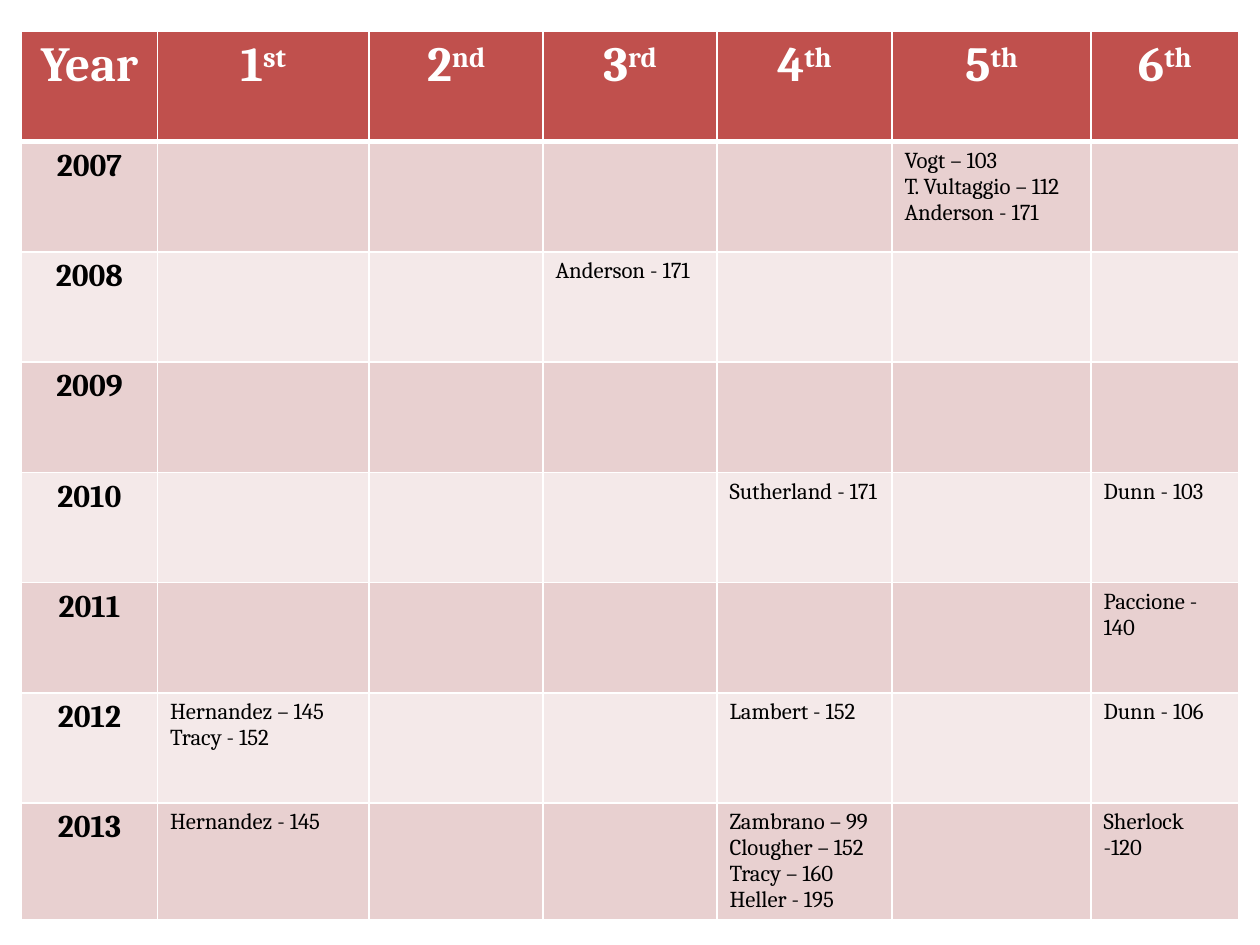
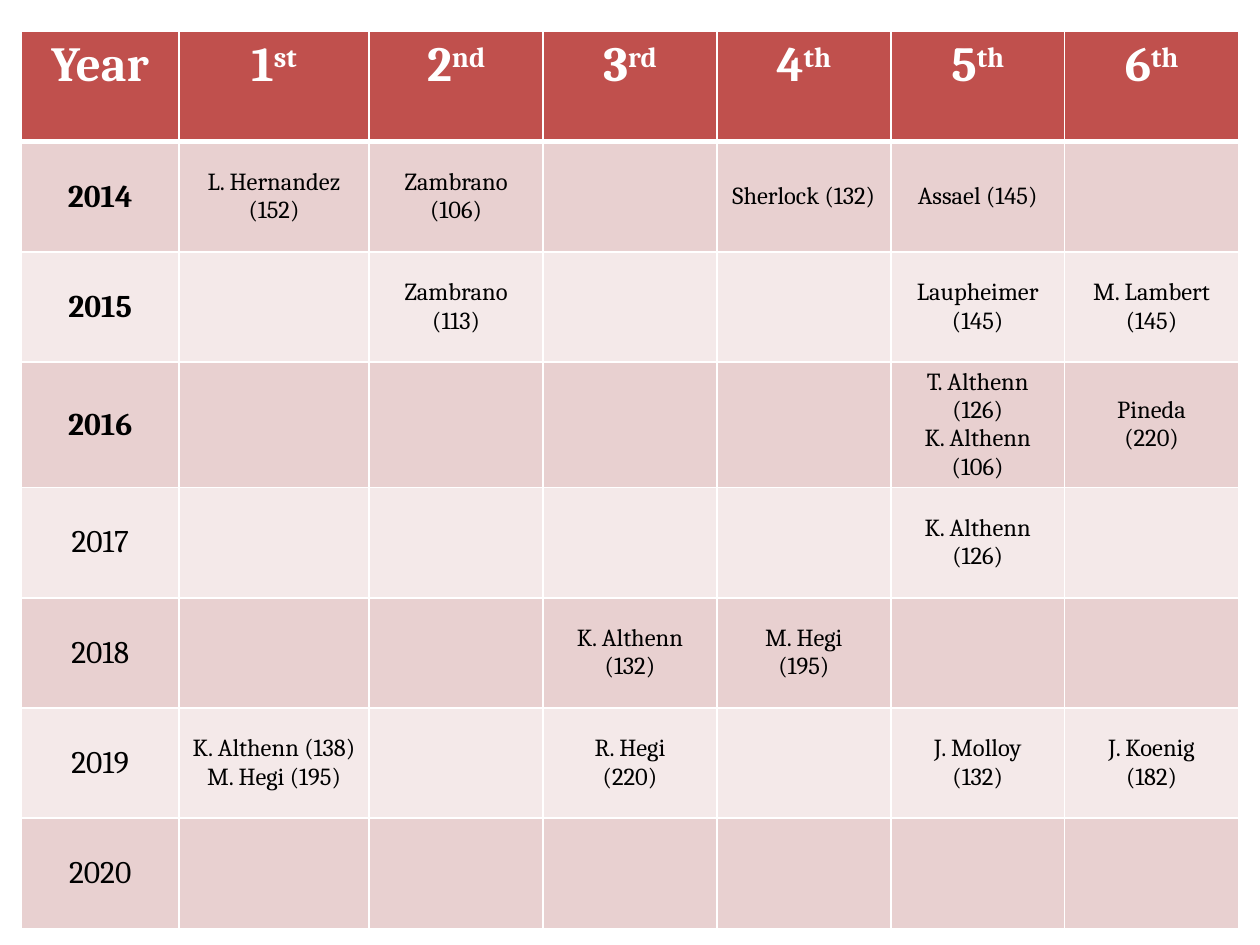
from lxml.etree import SubElement
from pptx import Presentation
from pptx.dml.color import RGBColor
from pptx.enum.text import MSO_ANCHOR as Anchor, PP_ALIGN as Align
from pptx.oxml.ns import qn
from pptx.util import Inches, Pt

HEADINGS = [("Year", ""), ("1", "st"), ("2", "nd"), ("3", "rd"),
            ("4", "th"), ("5", "th"), ("6", "th")]

EARLY_RESULTS = {
    "2007": {5: ["Vogt – 103", "T. Vultaggio – 112", "Anderson - 171"]},
    "2008": {3: ["Anderson - 171"]},
    "2009": {},
    "2010": {4: ["Sutherland - 171"], 6: ["Dunn - 103"]},
    "2011": {6: ["Paccione - 140"]},
    "2012": {1: ["Hernandez – 145", "Tracy - 152"], 4: ["Lambert - 152"], 6: ["Dunn - 106"]},
    "2013": {1: ["Hernandez - 145"],
             4: ["Zambrano – 99", "Clougher – 152", "Tracy – 160", "Heller - 195"],
             6: ["Sherlock -120"]},
}
LATE_RESULTS = {
    "2014": {1: ["L. Hernandez (152)"], 2: ["Zambrano (106)"],
             4: ["Sherlock (132)"], 5: ["Assael (145)"]},
    "2015": {2: ["Zambrano", "(113)"], 5: ["Laupheimer", "(145)"], 6: ["M. Lambert", "(145)"]},
    "2016": {5: ["T. Althenn (126)", "K. Althenn (106)"], 6: ["Pineda", "(220)"]},
    "2017": {5: ["K. Althenn", "(126)"]},
    "2018": {3: ["K. Althenn", "(132)"], 4: ["M. Hegi", "(195)"]},
    "2019": {1: ["K. Althenn (138)", "M. Hegi (195)"], 3: ["R. Hegi", "(220)"],
             5: ["J. Molloy", "(132)"], 6: ["J. Koenig", "(182)"]},
    "2020": {},
}

SLIDES = [
    {"results": EARLY_RESULTS, "widths": [1.08, 1.68, 1.38, 1.38, 1.39, 1.58, 1.17],
     "size": 13, "align": Align.LEFT, "anchor": Anchor.TOP, "last_bold_year": "2013"},
    {"results": LATE_RESULTS, "widths": [1.25, 1.51] + [1.38] * 5,
     "size": 14, "align": Align.CENTER, "anchor": Anchor.MIDDLE, "last_bold_year": "2016"},
]

WHITE = RGBColor(0xFF, 0xFF, 0xFF)
BLACK = RGBColor(0, 0, 0)
RED = RGBColor(0xC0, 0x50, 0x4D)
BANDS = [RGBColor(0xE8, 0xD0, 0xD0), RGBColor(0xF4, 0xE9, 0xE9)]

LEFT, TOP, TABLE_HEIGHT = 0.17, 0.25, 7
HEADING_FORMAT = {"name": "Cambria", "size": Pt(28), "bold": True}
YEAR_FORMAT = {"name": "Cambria", "size": Pt(18)}


def add_run(paragraph, text, color, font_format):
    run = paragraph.add_run()
    run.text = text
    for name, value in font_format.items():
        setattr(run.font, name, value)
    run.font.color.rgb = color
    return run


def write_lines(cell, lines, align, font_format):
    frame = cell.text_frame
    for index, line in enumerate(lines):
        paragraph = frame.add_paragraph() if index else frame.paragraphs[0]
        paragraph.alignment = align
        add_run(paragraph, line, BLACK, font_format)


def write_heading(cell, text, suffix):
    paragraph = cell.text_frame.paragraphs[0]
    paragraph.alignment = Align.CENTER
    add_run(paragraph, text, WHITE, HEADING_FORMAT)
    if suffix:
        run = add_run(paragraph, suffix, WHITE, HEADING_FORMAT)
        run._r.get_or_add_rPr().set("baseline", "30000")


def style_cell(cell, row):
    properties = cell._tc.get_or_add_tcPr()
    borders = {"a:lnL": 1, "a:lnR": 1, "a:lnT": 3 if row == 1 else 1, "a:lnB": 3 if row == 0 else 1}
    for tag, width in borders.items():
        line = SubElement(properties, qn(tag), w=str(Pt(width)))
        fill = SubElement(line, qn("a:solidFill"))
        SubElement(fill, qn("a:srgbClr"), val=str(WHITE))
    cell.fill.solid()
    cell.fill.fore_color.rgb = BANDS[(row - 1) % 2] if row else RED


def add_results_slide(presentation, results, widths, size, align, anchor, last_bold_year):
    slide = presentation.slides.add_slide(presentation.slide_layouts[6])
    row_count = len(results) + 1
    table = slide.shapes.add_table(row_count, len(widths), Inches(LEFT), Inches(TOP),
                                   Inches(sum(widths)), Inches(TABLE_HEIGHT)).table
    for column, width in zip(table.columns, widths):
        column.width = Inches(width)
    for row in range(row_count):
        for column in range(len(widths)):
            style_cell(table.cell(row, column), row)
    for column, heading in enumerate(HEADINGS):
        write_heading(table.cell(0, column), *heading)
    name_format = {"name": "Cambria", "size": Pt(size), "bold": False}
    for row, (year, places) in enumerate(results.items(), 1):
        year_format = {**YEAR_FORMAT, "bold": year <= last_bold_year}
        write_lines(table.cell(row, 0), [year], Align.CENTER, year_format)
        for place, names in places.items():
            write_lines(table.cell(row, place), names, align, name_format)
        for column in range(len(widths)):
            table.cell(row, column).vertical_anchor = anchor


def main():
    presentation = Presentation()
    presentation.slide_width, presentation.slide_height = Inches(10), Inches(7.5)
    for content in SLIDES:
        add_results_slide(presentation, **content)
    presentation.save("out.pptx")


if __name__ == "__main__":
    main()
